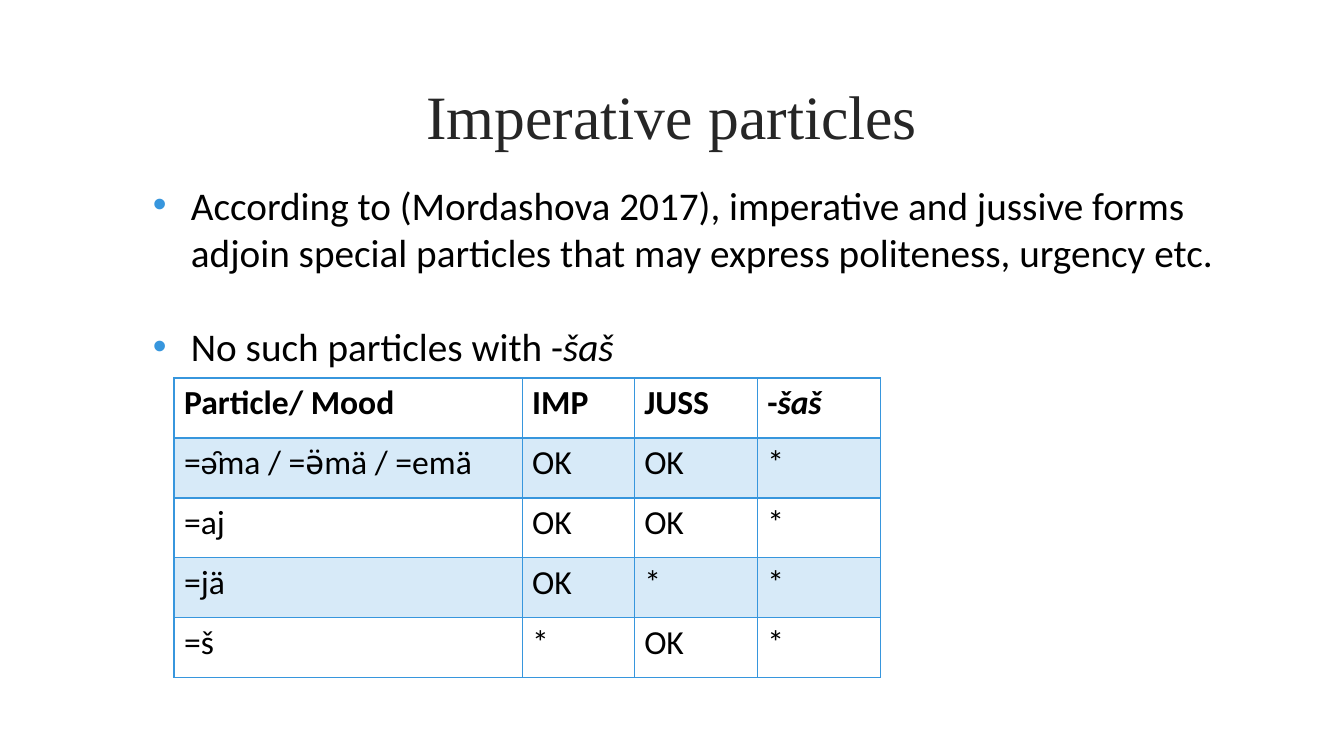
from lxml.etree import SubElement
from pptx import Presentation
from pptx.dml.color import RGBColor
from pptx.enum.text import MSO_ANCHOR, MSO_AUTO_SIZE, PP_ALIGN
from pptx.oxml.ns import qn
from pptx.util import Emu, Inches, Pt

BLUE, BLACK, DARK = "3796DD", "000000", "262626"
TITLE_BOX = (143, 43, 1058, 144)
BODY_BOX = (143, 176, 1086, 152)
TABLE_BOX = (174, 378, 706, 300)

BULLETS = [
    [("According to (Mordashova 2017), imperative and jussive forms adjoin "
      "special particles that may express politeness, urgency etc.", False)],
    [("No such particles with -", False), ("šaš", True)],
]
COL_WIDTHS = [348, 112, 123, 123]
ROWS = [
    ["Particle/ Mood", "IMP", "JUSS", "-šaš"],
    ["=ə̑ma / =ə̈mä / =emä", "OK", "OK", "*"],
    ["=aj", "OK", "OK", "*"],
    ["=jä", "OK", "*", "*"],
    ["=š", "*", "OK", "*"],
]


def px(n):
    return Emu(round(n * 914400 / 100.8))


def color(value):
    return RGBColor.from_string(value)


def add_run(p, text, size=28, font="Calibri", fill=BLACK, bold=False, italic=False):
    r = p.add_run()
    r.text = text
    r.font.size, r.font.name = Pt(size), font
    r.font.bold, r.font.italic = bold, italic
    r.font.color.rgb = color(fill)


def add_bullet(p):
    pPr = p._p.get_or_add_pPr()
    pPr.set("marL", str(px(38)))
    pPr.set("indent", str(-px(38)))
    SubElement(SubElement(pPr, qn("a:buClr")), qn("a:srgbClr"), val=BLUE)
    SubElement(pPr, qn("a:buFont"), typeface="Arial")
    SubElement(pPr, qn("a:buChar"), char="•")


def add_border(cell, side, width):
    ln = SubElement(cell._tc.get_or_add_tcPr(), qn(f"a:ln{side}"), w=str(Pt(width)))
    SubElement(SubElement(ln, qn("a:solidFill")), qn("a:srgbClr"), val=BLUE)


def fill_cell(cell, tinted):
    if not tinted:
        cell.fill.background()
        return
    cell.fill.solid()
    cell.fill.fore_color.rgb = color(BLUE)
    srgb = cell._tc.tcPr.find(qn("a:solidFill")).find(qn("a:srgbClr"))
    SubElement(srgb, qn("a:alpha"), val="20000")


def build_title(s, box):
    sp = s.shapes.title
    sp.left, sp.top, sp.width, sp.height = map(px, box)
    tf = sp.text_frame
    tf.auto_size = MSO_AUTO_SIZE.NONE
    tf.vertical_anchor = MSO_ANCHOR.MIDDLE
    p = tf.paragraphs[0]
    p.alignment = PP_ALIGN.CENTER
    add_run(p, "Imperative particles", size=44, font="Times New Roman", fill=DARK)


def build_table(s, box):
    table = s.shapes.add_table(len(ROWS), len(COL_WIDTHS), *map(px, box)).table
    table.first_row = table.horz_banding = False
    for column, width in zip(table.columns, COL_WIDTHS):
        column.width = px(width)
    for i, row in enumerate(ROWS):
        table.rows[i].height = px(box[3] / len(ROWS))
        for j, text in enumerate(row):
            cell = table.cell(i, j)
            # The rule under the header row is heavier
            widths = {"L": 1, "R": 1, "T": 2 if i == 1 else 1, "B": 2 if i == 0 else 1}
            for side, width in widths.items():
                add_border(cell, side, width)
            fill_cell(cell, tinted=i % 2 == 1)
            p = cell.text_frame.paragraphs[0]
            # The suffix is italic, its hyphen upright
            hyphen = "-" if text.startswith("-") else ""
            if hyphen:
                add_run(p, hyphen, size=24, bold=True)
            add_run(p, text.removeprefix("-"), size=24, bold=i == 0, italic=bool(hyphen))


def build_bullets(s, box):
    tf = s.shapes.add_textbox(*map(px, box)).text_frame
    tf.word_wrap = True
    tf.auto_size = MSO_AUTO_SIZE.SHAPE_TO_FIT_TEXT
    for i, runs in enumerate(BULLETS):
        p = tf.add_paragraph() if i else tf.paragraphs[0]
        add_bullet(p)
        if i:
            p.space_before = Pt(34)
        for text, italic in runs:
            add_run(p, text, italic=italic)


def main():
    prs = Presentation()
    prs.slide_width, prs.slide_height = Inches(13.33), Inches(7.5)
    s = prs.slides.add_slide(prs.slide_layouts[5])
    build_title(s, TITLE_BOX)
    build_table(s, TABLE_BOX)
    build_bullets(s, BODY_BOX)
    prs.save("out.pptx")


if __name__ == "__main__":
    main()
